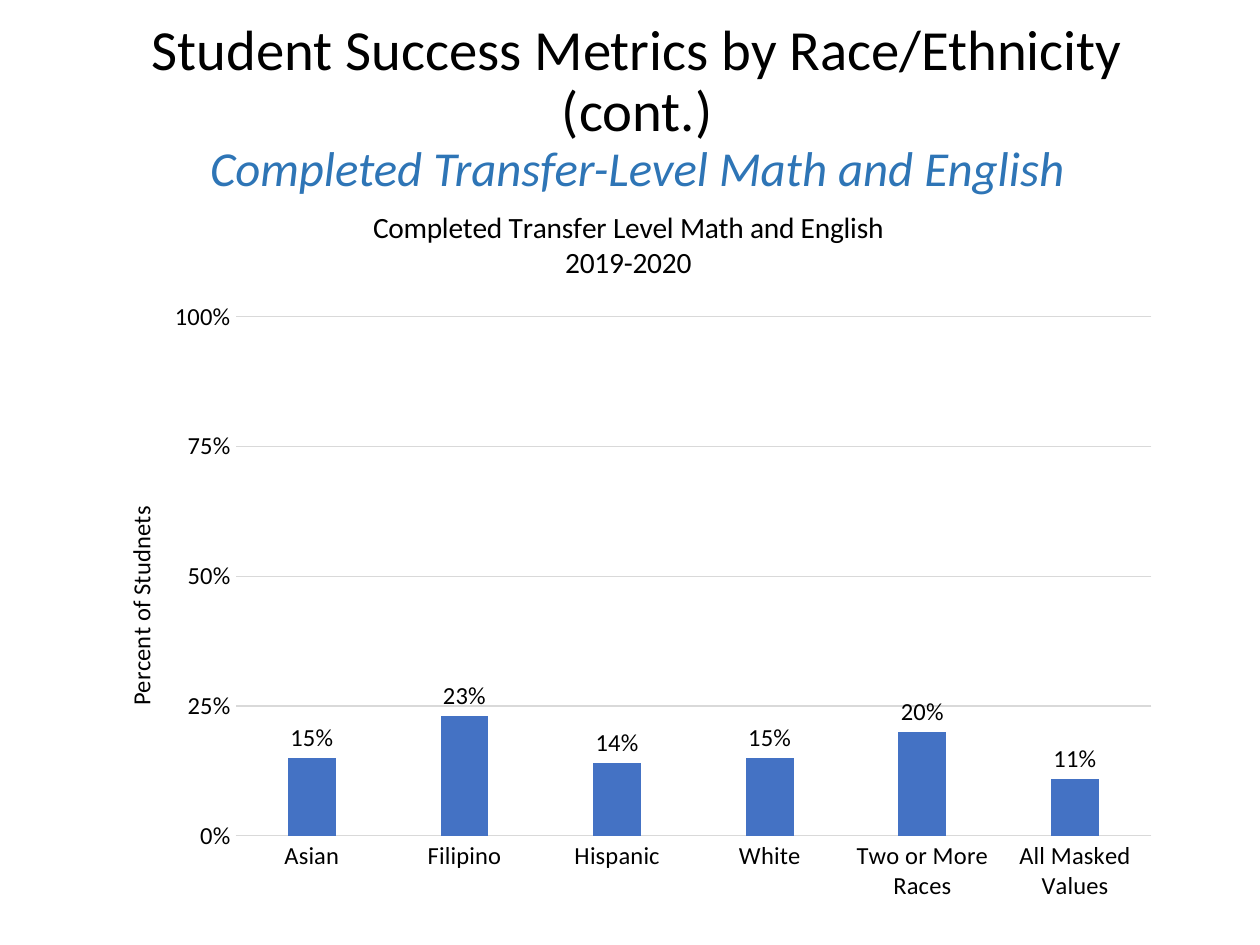
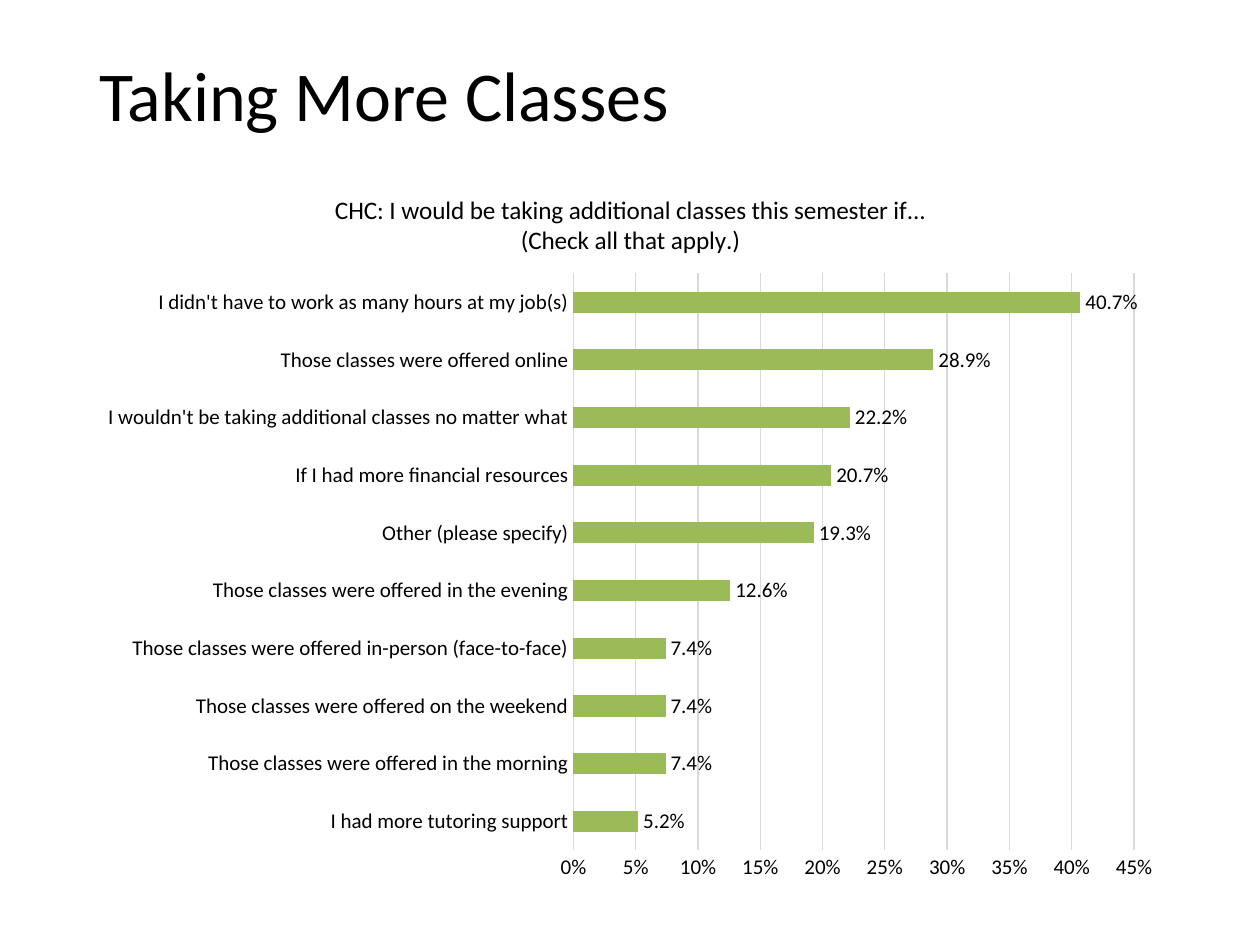
from dataclasses import dataclass

from lxml import etree
from pptx import Presentation
from pptx.chart.data import CategoryChartData
from pptx.dml.color import RGBColor
from pptx.enum.chart import XL_CHART_TYPE, XL_LABEL_POSITION, XL_TICK_MARK
from pptx.enum.text import MSO_ANCHOR, MSO_AUTO_SIZE, PP_ALIGN
from pptx.oxml.ns import qn
from pptx.util import Cm, Pt

COLUMN = XL_CHART_TYPE.COLUMN_CLUSTERED
BAR = XL_CHART_TYPE.BAR_CLUSTERED
OUTSIDE_END = XL_LABEL_POSITION.OUTSIDE_END
NO_TICK = XL_TICK_MARK.NONE
MIDDLE = MSO_ANCHOR.MIDDLE
NO_FIT = MSO_AUTO_SIZE.NONE
LEFT, CENTER = PP_ALIGN.LEFT, PP_ALIGN.CENTER
BLANK_LAYOUT = 6


@dataclass(frozen=True)
class Theme:
    font: str = "Calibri"
    text: str = "000000"
    accent: str = "2E75B6"
    grid: str = "D9D9D9"
    blue_bars: str = "4472C4"
    green_bars: str = "9BBB59"
    title_size: float = 40
    long_title_size: float = 32.4
    subtitle_size: float = 27.9
    large_label: float = 14
    small_label: float = 12
    chart_title_ratio: float = 1.2
    line_width: float = 0.75


THEME = Theme()

SUCCESS_RATES = {
    "Asian": 0.15,
    "Filipino": 0.23,
    "Hispanic": 0.14,
    "White": 0.15,
    "Two or More Races": 0.2,
    "All Masked Values": 0.11,
}

CLASS_REASONS = {
    "I had more tutoring support": 0.052,
    "Those classes were offered in the morning": 0.074,
    "Those classes were offered on the weekend": 0.074,
    "Those classes were offered in-person (face-to-face)": 0.074,
    "Those classes were offered in the evening": 0.126,
    "Other (please specify)": 0.193,
    "If I had more financial resources": 0.207,
    "I wouldn't be taking additional classes no matter what": 0.222,
    "Those classes were offered online": 0.289,
    "I didn't have to work as many hours at my job(s)": 0.407,
}


def set_values(target, values):
    for name, value in values.items():
        setattr(target, name, value)


def style_font(font, size, color=THEME.text, italic=False):
    set_values(font, {"name": THEME.font, "size": Pt(size), "bold": False, "italic": italic})
    font.color.rgb = RGBColor.from_string(color)


def style_line(line):
    line.color.rgb = RGBColor.from_string(THEME.grid)
    line.width = Pt(THEME.line_width)


def set_layout(element, **fractions):
    """Place a chart part by fractions of the chart area."""
    layout = element.find(qn("c:layout"))
    if layout is None:
        layout = etree.Element(qn("c:layout"))
        element.insert(0, layout)
    manual = etree.SubElement(layout, qn("c:manualLayout"))
    settings = {"xMode": "edge", "yMode": "edge", **fractions}
    if "w" in fractions:
        settings = {"layoutTarget": "inner", **settings}
    for name, value in settings.items():
        etree.SubElement(manual, qn(f"c:{name}")).set("val", str(value))


def add_title(slide, box, lines, alignment):
    """Write a slide title; lines holds (text, size, colour, italic)."""
    frame = slide.shapes.add_textbox(*map(Cm, box)).text_frame
    set_values(frame, {"word_wrap": True, "auto_size": NO_FIT, "vertical_anchor": MIDDLE})
    paragraph = frame.paragraphs[0]
    set_values(paragraph, {"alignment": alignment, "line_spacing": 0.9})
    for index, (text, size, color, italic) in enumerate(lines):
        if index:
            paragraph.add_line_break()
        run = paragraph.add_run()
        run.text = text
        style_font(run.font, size, color, italic)


def write_chart_text(title, text, size, position):
    """Fill a chart or axis title and put it at (x, y)."""
    title.text_frame.text = text
    for paragraph in title.text_frame.paragraphs:
        for run in paragraph.runs:
            style_font(run.font, size)
    x, y = position
    set_layout(title._element, x=x, y=y)


def add_percent_chart(slide, box, kind, values, title, title_position, plot_area,
                      color, size, gap, label_format, maximum, step):
    data = CategoryChartData()
    data.categories = list(values)
    data.add_series("Series 1", list(values.values()))
    chart = slide.shapes.add_chart(kind, *map(Cm, box), data).chart
    style_font(chart.font, size)
    chart.has_legend = False

    # Heading and plot area
    chart.has_title = True
    write_chart_text(chart.chart_title, title, size * THEME.chart_title_ratio, title_position)
    chart.chart_title.include_in_layout = False
    x, y, width, height = plot_area
    set_layout(chart._chartSpace.chart.plotArea, x=x, y=y, w=width, h=height)

    # Axes
    for axis in (chart.category_axis, chart.value_axis):
        set_values(axis, {"major_tick_mark": NO_TICK, "minor_tick_mark": NO_TICK})
        style_font(axis.tick_labels.font, size)
    chart.category_axis.has_major_gridlines = False
    style_line(chart.category_axis.format.line)
    value_axis = chart.value_axis
    set_values(value_axis, {"minimum_scale": 0, "maximum_scale": maximum,
                            "major_unit": step, "has_major_gridlines": True})
    set_values(value_axis.tick_labels, {"number_format": "0%", "number_format_is_linked": False})
    value_axis.format.line.fill.background()
    style_line(value_axis.major_gridlines.format.line)

    # Bars and their labels
    plot = chart.plots[0]
    set_values(plot, {"gap_width": gap, "vary_by_categories": False, "has_data_labels": True})
    fill = plot.series[0].format.fill
    fill.solid()
    fill.fore_color.rgb = RGBColor.from_string(color)
    labels = plot.data_labels
    set_values(labels, {"show_value": True, "position": OUTSIDE_END,
                        "number_format": label_format, "number_format_is_linked": False})
    style_font(labels.font, size)
    return chart


def add_vertical_axis_title(chart, text, size, position):
    title = chart.value_axis.axis_title
    write_chart_text(title, text, size, position)
    body = title._element.find(".//" + qn("a:bodyPr"))
    body.set("rot", "-5400000")
    body.set("vert", "horz")


def build_success_slide(slide):
    add_title(slide, (1.4, 1.02, 22.89, 2.36), [
        ("Student Success Metrics by Race/Ethnicity (cont.)", THEME.long_title_size, THEME.text, False),
        ("Completed Transfer-Level Math and English", THEME.subtitle_size, THEME.accent, True),
    ], CENTER)
    chart = add_percent_chart(
        slide, (1.75, 3.68, 21.9, 14.78), COLUMN, SUCCESS_RATES,
        title="Completed Transfer Level Math and English\n2019-2020",
        title_position=(0.26, 0.03), plot_area=(0.137, 0.183, 0.843, 0.708),
        color=THEME.blue_bars, size=THEME.large_label, gap=219,
        label_format="0%", maximum=1, step=0.25)
    chart.plots[0].overlap = -27
    add_vertical_axis_title(chart, "Percent of Studnets", THEME.large_label, (0.03, 0.435))


def build_classes_slide(slide):
    add_title(slide, (1.75, 0.58, 21.9, 2.82),
              [("Taking More Classes", THEME.title_size, THEME.text, False)], LEFT)
    add_percent_chart(
        slide, (1.75, 3.25, 21.9, 14.78), BAR, CLASS_REASONS,
        title="CHC: I would be taking additional classes this semester if...\n(Check all that apply.)",
        title_position=(0.225, 0.038), plot_area=(0.448, 0.153, 0.516, 0.787),
        color=THEME.green_bars, size=THEME.small_label, gap=173,
        label_format="0.0%", maximum=0.45, step=0.05)


def main():
    presentation = Presentation()
    set_values(presentation, {"slide_width": Cm(25.4), "slide_height": Cm(19.05)})
    for build in (build_success_slide, build_classes_slide):
        build(presentation.slides.add_slide(presentation.slide_layouts[BLANK_LAYOUT]))
    presentation.save("out.pptx")


if __name__ == "__main__":
    main()
